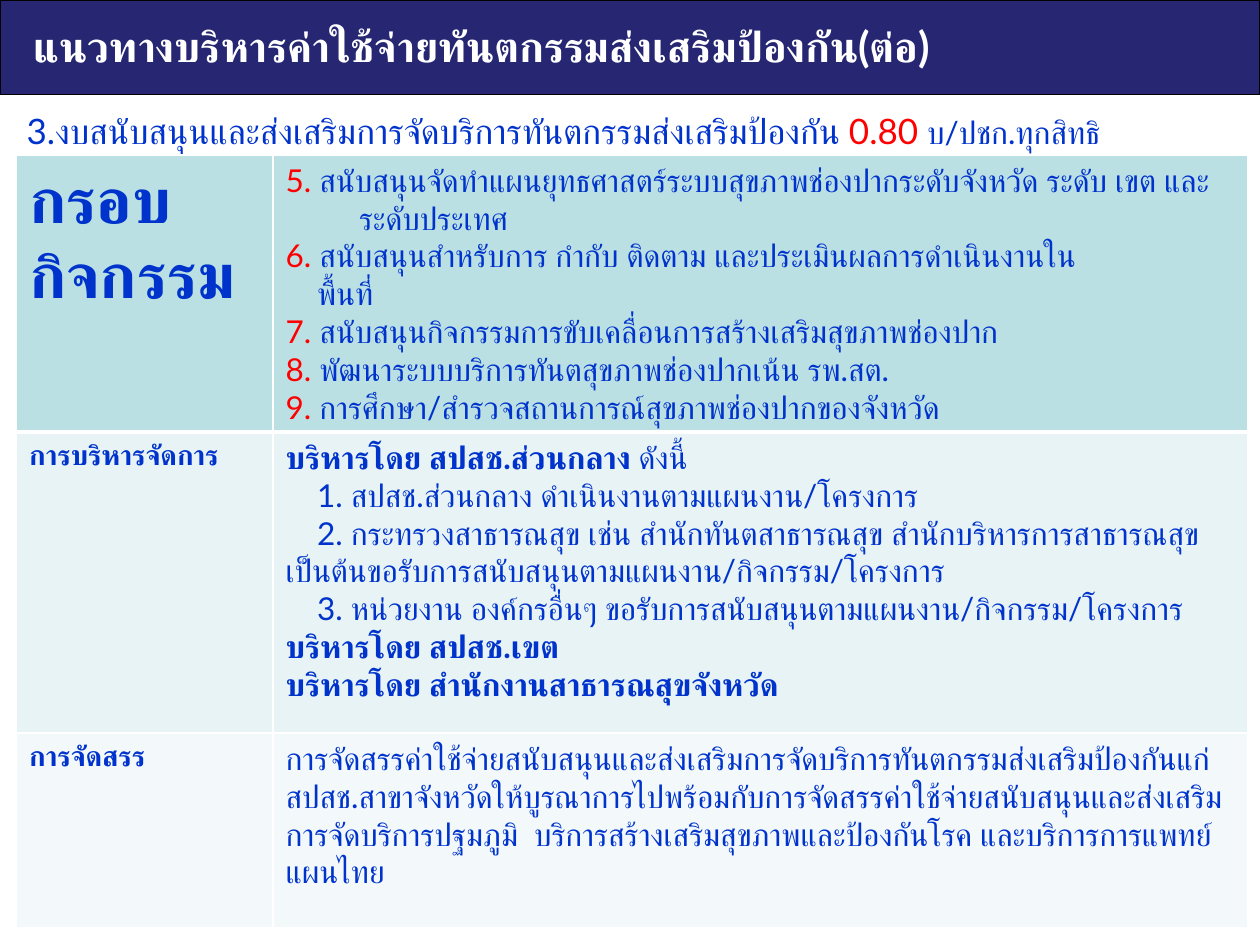
from lxml import etree
from pptx import Presentation
from pptx.dml.color import RGBColor
from pptx.enum import shapes, text
from pptx.oxml import ns
from pptx.util import Pt

FONT = "Lato"
COLORS = {
    "bar": "262673", "black": "000000", "white": "FFFFFF",
    "blue": "0033CC", "red": "FF0000",
    "teal": "BBE0E3", "pale": "E7F3F4", "palest": "F3F9FA",
}
HANGING = {"left": 42, "first": -42}
FIRST_LINE = {"first": 18}

ACTIVITIES = [
    ("5.", " สนับสนุนจัดทำแผนยุทธศาสตร์ระบบสุขภาพช่องปากระดับจังหวัด ระดับ เขต และระดับประเทศ"),
    ("6.", " สนับสนุนสำหรับการ กำกับ ติดตาม และประเมินผลการดำเนินงานใน"),
    ("", "พื้นที่"),
    ("7.", " สนับสนุนกิจกรรมการขับเคลื่อนการสร้างเสริมสุขภาพช่องปาก"),
    ("8.", " พัฒนาระบบบริการทันตสุขภาพช่องปากเน้น รพ.สต."),
    ("9.", " การศึกษา/สำรวจสถานการณ์สุขภาพช่องปากของจังหวัด"),
]
MANAGEMENT = [
    ([("บริหารโดย สปสช.ส่วนกลาง ", {"bold": True}), ("ดังนี้", {})], {}),
    ([("1. สปสช.ส่วนกลาง ดำเนินงานตามแผนงาน/โครงการ", {})], FIRST_LINE),
    ([("2. กระทรวงสาธารณสุข เช่น สำนักทันตสาธารณสุข สำนักบริหารการสาธารณสุข"
       "เป็นต้นขอรับการสนับสนุนตามแผนงาน/กิจกรรม/โครงการ", {})], FIRST_LINE),
    ([("3. หน่วยงาน องค์กรอื่นๆ ขอรับการสนับสนุนตามแผนงาน/กิจกรรม/โครงการ", {})], FIRST_LINE),
    ([("บริหารโดย สปสช.เขต", {"bold": True})], {}),
    ([("บริหารโดย สำนักงานสาธารณสุขจังหวัด", {"bold": True})], {}),
]
ALLOCATION = (
    "การจัดสรรค่าใช้จ่ายสนับสนุนและส่งเสริมการจัดบริการทันตกรรมส่งเสริมป้องกันแก่"
    "สปสช.สาขาจังหวัดให้บูรณาการไปพร้อมกับการจัดสรรค่าใช้จ่ายสนับสนุนและส่งเสริม"
    "การจัดบริการปฐมภูมิ  บริการสร้างเสริมสุขภาพและป้องกันโรค และบริการการแพทย์แผนไทย"
)


def rgb(name):
    return RGBColor.from_string(COLORS[name])


def add_text(paragraph, words, size=18, color="blue", bold=False):
    run = paragraph.add_run()
    run.text = words
    font = run.font
    font.name, font.size, font.bold = FONT, Pt(size), bold
    font.color.rgb = rgb(color)
    complex_script = etree.SubElement(run._r.get_or_add_rPr(), ns.qn("a:cs"))
    complex_script.set("typeface", FONT)


def set_indent(paragraph, left=0, first=0):
    properties = paragraph._p.get_or_add_pPr()
    properties.set("marL", str(Pt(left)))
    properties.set("indent", str(Pt(first)))


def fill_frame(frame, paragraphs):
    """Write paragraphs, each a list of (words, format) and its indents."""
    for index, (pieces, indents) in enumerate(paragraphs):
        paragraph = frame.add_paragraph() if index else frame.paragraphs[0]
        paragraph.alignment = text.PP_ALIGN.LEFT
        set_indent(paragraph, **indents)
        for words, style in pieces:
            add_text(paragraph, words, **style)


def place(placeholder, left, top, width, height, anchor):
    placeholder.left, placeholder.top = Pt(left), Pt(top)
    placeholder.width, placeholder.height = Pt(width), Pt(height)
    frame = placeholder.text_frame
    frame.word_wrap = True
    frame.auto_size = text.MSO_AUTO_SIZE.NONE
    frame.vertical_anchor = anchor
    return frame


def build_header(slide, left, top, width, height):
    bar = slide.shapes.add_shape(shapes.MSO_SHAPE.RECTANGLE,
                                 Pt(left), Pt(top), Pt(width), Pt(height))
    bar.shadow.inherit = False
    bar.fill.solid()
    bar.fill.fore_color.rgb = rgb("bar")
    bar.line.color.rgb = rgb("black")
    bar.line.width = Pt(0.75)
    slide.shapes._spTree.insert(2, bar._element)

    frame = place(slide.shapes.title, left + 12, top + 2, width - 114, height - 6,
                  text.MSO_ANCHOR.MIDDLE)
    heading = "แนวทางบริหารค่าใช้จ่ายทันตกรรมส่งเสริมป้องกัน(ต่อ)"
    fill_frame(frame, [([(heading, {"size": 24, "color": "white", "bold": True})], {})])


def build_budget_line(slide, left, top, width, height):
    frame = place(slide.placeholders[1], left, top, width, height, text.MSO_ANCHOR.TOP)
    paragraph = frame.paragraphs[0]
    etree.SubElement(paragraph._p.get_or_add_pPr(), ns.qn("a:buNone"))
    paragraph.line_spacing = 1.2
    paragraph.space_before = Pt(0)
    fill_frame(frame, [([
        ("3.งบสนับสนุนและส่งเสริมการจัดบริการทันตกรรมส่งเสริมป้องกัน", {"size": 20}),
        (" 0.80 ", {"size": 20, "color": "red"}),
        ("บ/ปชก.ทุกสิทธิ", {}),
    ], {})])


def set_border(cell, side, width):
    line = etree.SubElement(cell._tc.get_or_add_tcPr(), ns.qn("a:ln" + side), w=str(Pt(width)))
    solid = etree.SubElement(line, ns.qn("a:solidFill"))
    etree.SubElement(solid, ns.qn("a:srgbClr"), val=COLORS["white"])


def activity_paragraphs():
    for number, words in ACTIVITIES:
        if number:
            yield [(number, {"color": "red"}), (words, {})], HANGING
        else:
            yield [(words, {})], {"left": 18}


def build_plan_table(slide, left, top, column_widths, row_heights):
    rows = [
        ("กรอบกิจกรรม", 36, list(activity_paragraphs()), "teal"),
        ("การบริหารจัดการ", 16, MANAGEMENT, "pale"),
        ("การจัดสรร", 16, [([(ALLOCATION, {})], {})], "palest"),
    ]
    table = slide.shapes.add_table(len(rows), len(column_widths), Pt(left), Pt(top),
                                   Pt(sum(column_widths)), Pt(sum(row_heights))).table
    table.first_row = table.horz_banding = False
    for column, width in zip(table.columns, column_widths):
        column.width = Pt(width)

    for index, (label, size, details, fill) in enumerate(rows):
        table.rows[index].height = Pt(row_heights[index])
        heading = [([(label, {"size": size, "bold": True})], {})]
        for column, paragraphs in enumerate((heading, details)):
            cell = table.cell(index, column)
            fill_frame(cell.text_frame, paragraphs)
            borders = {"L": 1, "R": 1, "T": 3 if index == 1 else 1, "B": 3 if index == 0 else 1}
            for side, width in borders.items():
                set_border(cell, side, width)
            cell.fill.solid()
            cell.fill.fore_color.rgb = rgb(fill)


def main():
    deck = Presentation()
    deck.slide_width, deck.slide_height = Pt(720), Pt(540)
    slide = deck.slides.add_slide(deck.slide_layouts[1])
    build_header(slide, 0, 0, 720, 54)
    build_budget_line(slide, 8, 54, 702, 481)
    build_plan_table(slide, 9.5, 88.5, (146.5, 557), (151, 172, 111.5))
    deck.save("out.pptx")


if __name__ == "__main__":
    main()
